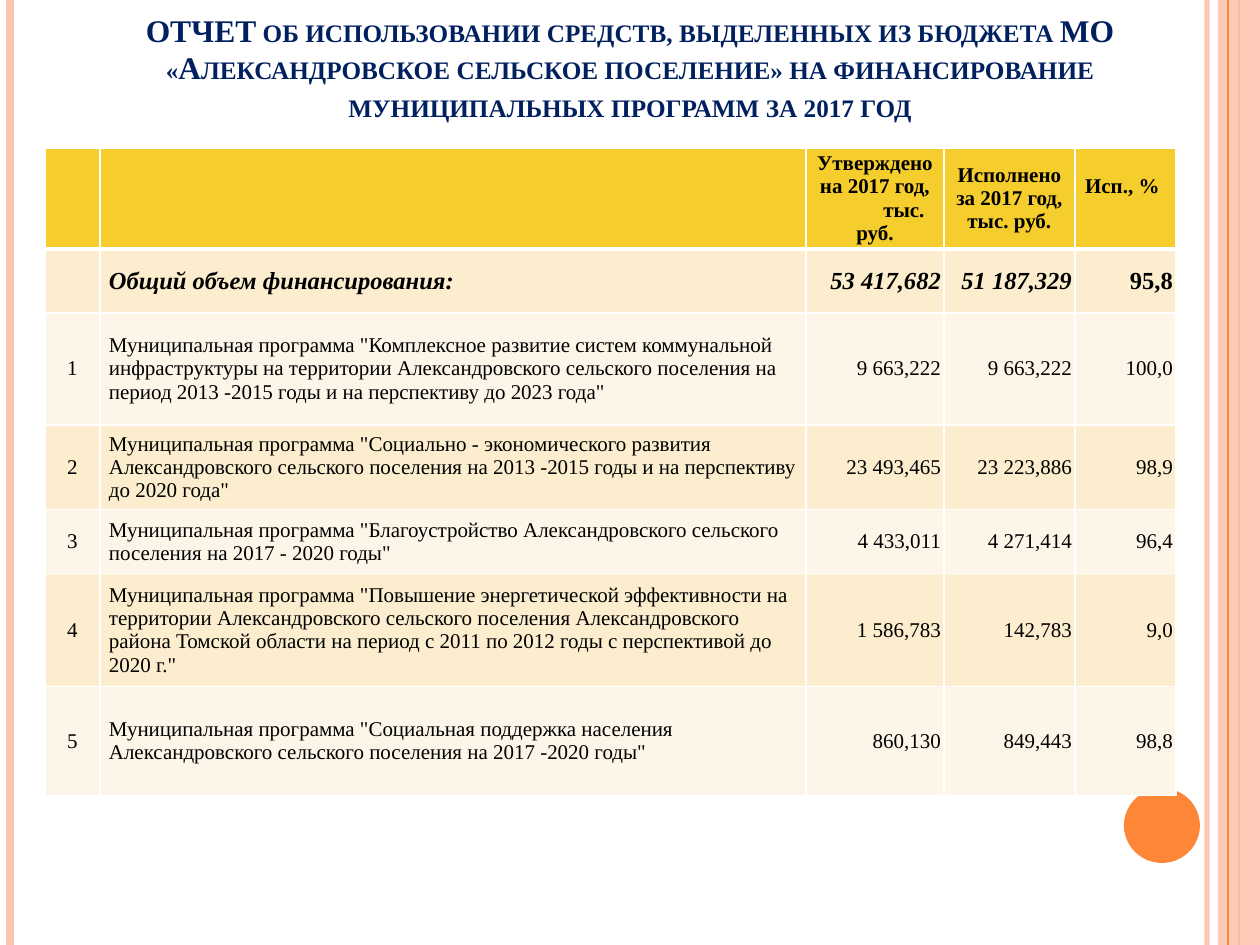
from lxml import etree
from pptx import Presentation
from pptx.dml.color import RGBColor
from pptx.enum.shapes import MSO_CONNECTOR, MSO_SHAPE
from pptx.enum.text import MSO_ANCHOR, PP_ALIGN
from pptx.oxml.ns import qn
from pptx.util import Emu, Pt

FONT = "Times New Roman"
PEACH, ORANGE, NAVY, BLACK, WHITE = "FEC3AE", "FE8637", "002060", "000000", "FFFFFF"
HEADER_FILL, BAND_FILLS = "F5CD2D", ("FBEDCD", "FDF6E8")
COLUMNS = (55, 706, 138, 131, 101)
ROWS = (93, 64, 112, 85, 64, 113, 109)

TITLE = ("ОТЧЕТ об использовании средств, выделенных из бюджета МО "
         "«Александровское сельское поселение» на финансирование "
         "муниципальных программ за 2017 год")
HEADER = ("", "", "Утверждено на 2017 год,\nтыс.\nруб.",
          "Исполнено за 2017 год, тыс. руб.", "Исп., %")
TOTAL = ("", "Общий объем финансирования:", "53 417,682", "51 187,329", "95,8")
PROGRAMS = [
    ('"Комплексное развитие систем коммунальной инфраструктуры на территории '
     'Александровского сельского поселения на период 2013 -2015 годы и на '
     'перспективу до 2023 года"', "9 663,222", "9 663,222", "100,0"),
    ('"Социально - экономического развития Александровского сельского поселения '
     'на 2013 -2015 годы и на перспективу до 2020 года"',
     "23 493,465", "23 223,886", "98,9"),
    ('"Благоустройство Александровского сельского поселения на 2017 - 2020 годы"',
     "4 433,011", "4 271,414", "96,4"),
    ('"Повышение энергетической эффективности на территории Александровского '
     'сельского поселения Александровского района Томской области на период с '
     '2011 по 2012 годы с перспективой до 2020 г."', "1 586,783", "142,783", "9,0"),
    ('"Социальная поддержка населения Александровского сельского поселения '
     'на 2017 -2020 годы"', "860,130", "849,443", "98,8"),
]


def px(n):
    return Emu(round(n * 914400 / 126))


def color(value):
    return RGBColor.from_string(value)


def set_alpha(fill, percent):
    clr = fill._xPr.find(".//" + qn("a:srgbClr"))
    etree.SubElement(clr, qn("a:alpha")).set("val", str(percent * 1000))


def add_line(s, x, top, height, hex_color, width):
    line = s.shapes.add_connector(MSO_CONNECTOR.STRAIGHT, px(x), px(top), px(x), px(top + height))
    line.line.color.rgb = color(hex_color)
    line.line.width = Pt(width)
    etree.SubElement(line._element.spPr, qn("a:effectLst"))
    return line


def add_shape(s, kind, x, y, w, h, hex_color):
    sp = s.shapes.add_shape(kind, px(x), px(y), px(w), px(h))
    sp.shadow.inherit = False
    sp.fill.solid()
    sp.fill.fore_color.rgb = color(hex_color)
    sp.line.fill.background()
    return sp


def format_run(r, size, hex_color, bold=False, italic=False):
    r.font.name = FONT
    r.font.size = Pt(size)
    r.font.bold = bold
    r.font.italic = italic
    r.font.color.rgb = color(hex_color)


def add_decoration(s, x, y, w, h):
    inner = add_line(s, x + w - 53, y, h, PEACH, 3)
    set_alpha(inner.line.fill, 93)
    add_line(s, x + 10, y, h, PEACH, 4.5)
    band = add_shape(s, MSO_SHAPE.RECTANGLE, x + w - 42, y, 42, h, PEACH)
    set_alpha(band.fill, 87)
    axis = add_line(s, x + w - 21, y, h, ORANGE, 1.5)
    axis.begin_connect(band, 0)
    axis.end_connect(band, 2)
    axis._element.addnext(band._element)
    add_line(s, x + w - 32, y, h, ORANGE, 0.75)
    add_shape(s, MSO_SHAPE.OVAL, x + w - 136, y + h - 157, 76, 75, ORANGE)


def add_title(s, x, y, w, h):
    tf = s.shapes.add_textbox(px(x), px(y), px(w), px(h)).text_frame
    tf.word_wrap = True
    tf.margin_top = tf.margin_bottom = 0
    tf.text = TITLE
    p = tf.paragraphs[0]
    p.alignment = PP_ALIGN.CENTER
    p.line_spacing = Pt(21.4)
    r = p.runs[0]
    format_run(r, 18, NAVY, bold=True)
    r.font._element.set("cap", "small")


def set_borders(cell, top, bottom):
    tcPr = cell._tc.get_or_add_tcPr()
    for i, (side, width) in enumerate((("L", 1), ("R", 1), ("T", top), ("B", bottom))):
        ln = etree.Element(qn("a:ln" + side), w=str(Pt(width)))
        fill = etree.SubElement(ln, qn("a:solidFill"))
        etree.SubElement(fill, qn("a:srgbClr"), val=WHITE)
        tcPr.insert(i, ln)


def fill_cell(cell, text, row, col):
    header, total = row == 0, row == 1
    cell.fill.solid()
    cell.fill.fore_color.rgb = color(HEADER_FILL if header else BAND_FILLS[(row - 1) % 2])
    set_borders(cell, 3 if total else 1, 3 if header else 1)
    numeric = col > 1 and not header
    cell.margin_left = cell.margin_right = px(3 if numeric else 9)
    cell.margin_top = cell.margin_bottom = 0
    cell.vertical_anchor = MSO_ANCHOR.MIDDLE
    cell.text_frame.text = text
    for p in cell.text_frame.paragraphs:
        if numeric:
            p.alignment = PP_ALIGN.RIGHT
        else:
            p.alignment = PP_ALIGN.LEFT if col == 1 else PP_ALIGN.CENTER
        for r in p.runs:
            format_run(r, 14 if total else 12, BLACK, header or total, total and col < 4)


def add_budget_table(s, x, y, w, h):
    rows = [HEADER, TOTAL]
    rows += [(str(n), "Муниципальная программа " + name, *values)
             for n, (name, *values) in enumerate(PROGRAMS, 1)]
    table = s.shapes.add_table(len(rows), len(COLUMNS), px(x), px(y), px(w), px(h)).table
    for column, width in zip(table.columns, COLUMNS):
        column.width = px(width)
    for i, (row, height, texts) in enumerate(zip(table.rows, ROWS, rows)):
        row.height = px(height)
        for j, text in enumerate(texts):
            fill_cell(table.cell(i, j), text, i, j)
    unit = table.cell(0, 2).text_frame.paragraphs[1]
    unit._p.get_or_add_pPr().set("marL", str(px(58)))
    table.cell(0, 4).margin_bottom = px(23)
    table.cell(0, 4).margin_right = px(15)


def main():
    prs = Presentation()
    prs.slide_width, prs.slide_height = px(1260), px(945)
    s = prs.slides.add_slide(prs.slide_layouts[6])
    add_decoration(s, 0, 0, 1260, 945)
    add_title(s, 63, 11, 1134, 115)
    add_budget_table(s, 45, 148, sum(COLUMNS), sum(ROWS))
    prs.save("out.pptx")


if __name__ == "__main__":
    main()
